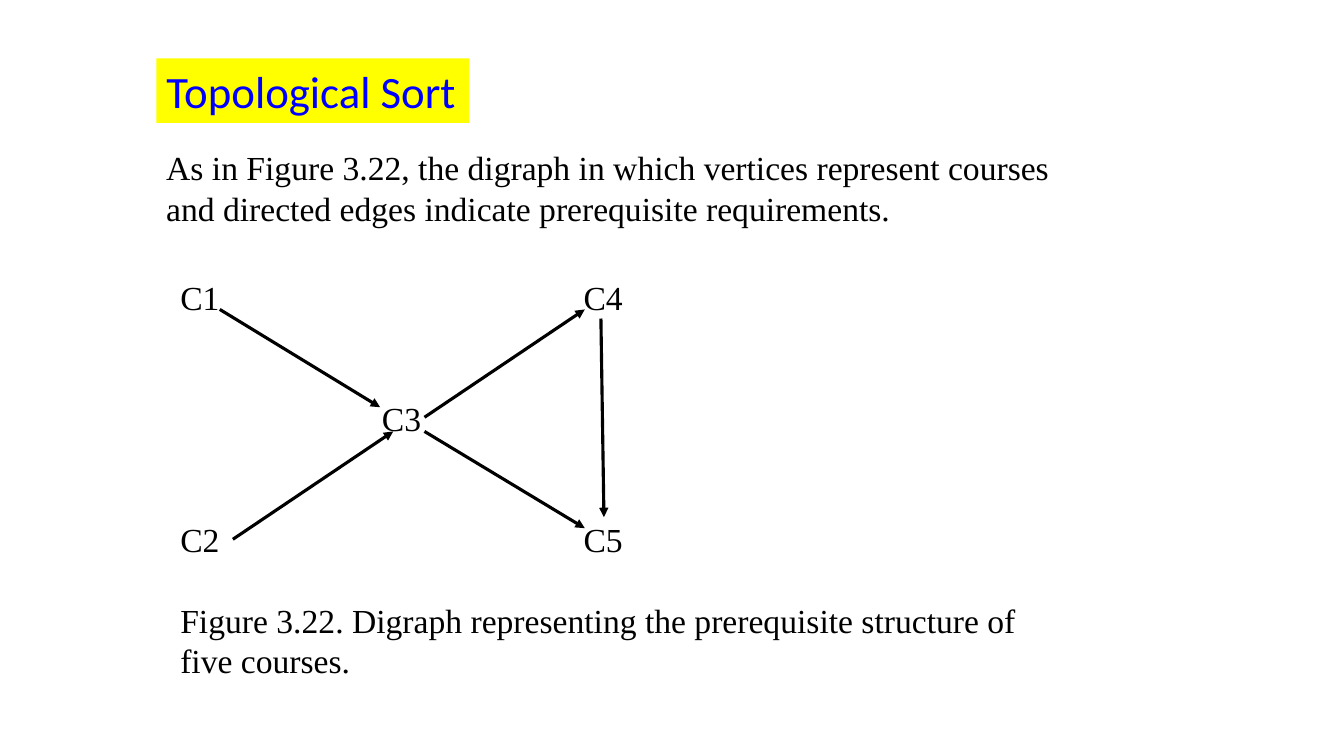
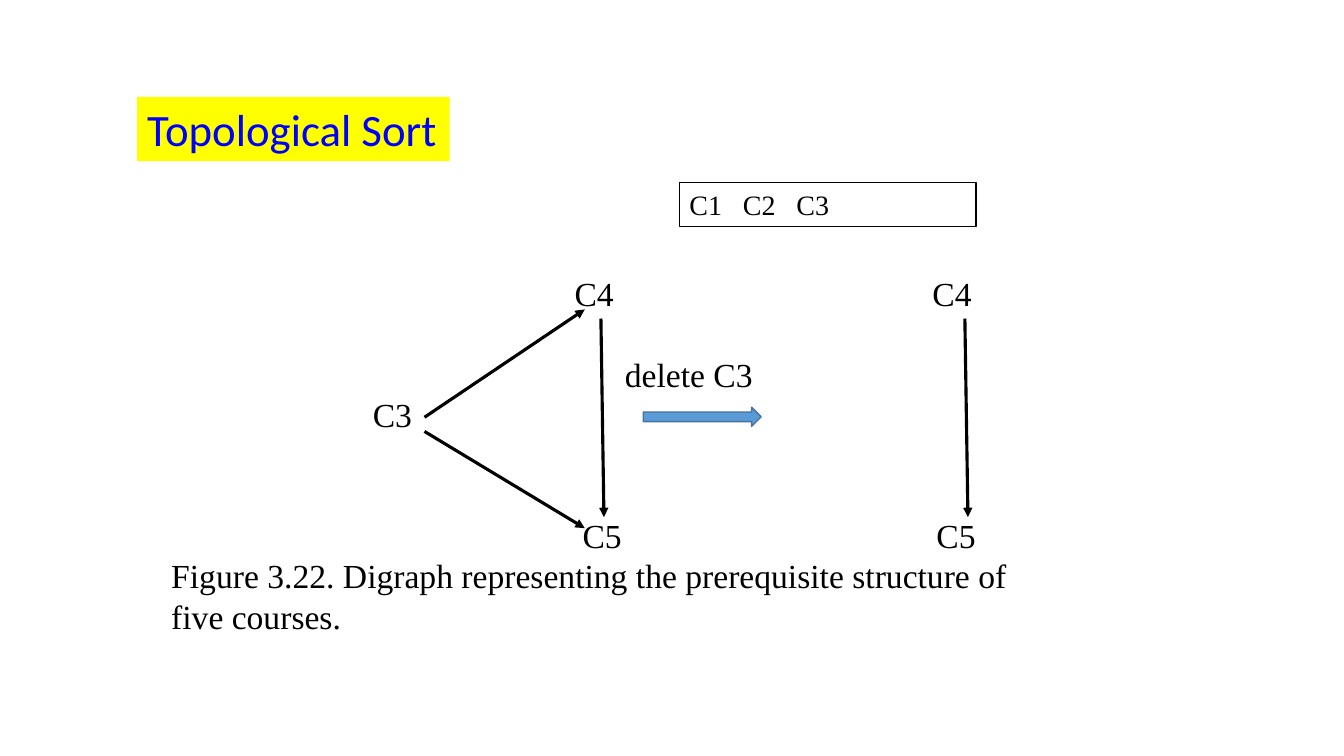
from lxml.etree import SubElement
from pptx import Presentation
from pptx.dml.color import RGBColor
from pptx.enum.shapes import MSO_CONNECTOR, MSO_SHAPE
from pptx.enum.text import MSO_ANCHOR, MSO_AUTO_SIZE, PP_ALIGN
from pptx.oxml.ns import qn
from pptx.util import Emu, Pt

PX = 9144  # 100 px to the inch
SERIF, SANS = "Times New Roman", "Calibri"
BLACK, WHITE, YELLOW, TITLE_BLUE = "000000", "FFFFFF", "FFFF00", "0000FF"
ARROW_FILL, ARROW_LINE = "5B9BD5", "43739E"

TITLE = "Topological Sort"
CAPTION = ("Figure 3.22. Digraph representing the prerequisite structure of "
           "five courses.")
INTRO = ("As in Figure 3.22, the digraph in which vertices represent courses "
         "and directed edges indicate prerequisite requirements.")
LABEL_SIZE = (70, 46)
PARAGRAPH_HEIGHT = 91

C1_TO_C3 = (218, 307, 377, 404)
C2_TO_C3 = (231, 535, 390, 428)
C3_TO_C4 = (421, 414, 580, 307)
C3_TO_C5 = (421, 428, 580, 524)
C4_TO_C5 = (596, 316, 599, 513)
REMAINING_C4_TO_C5 = (957, 316, 960, 513)

SLIDES = [
    {
        "title_at": (155, 58),
        "paragraphs": [(INTRO, 155, 141, 935), (CAPTION, 169, 590, 904)],
        "courses": [("C1", 169, 270), ("C4", 569, 270), ("C3", 369, 390),
                    ("C2", 169, 510), ("C5", 569, 510)],
        "edges": [C1_TO_C3, C3_TO_C5, C3_TO_C4, C2_TO_C3, C4_TO_C5],
    },
    {
        "title_at": (136, 96),
        "paragraphs": [(CAPTION, 160, 546, 904)],
        "courses": [("C4", 560, 266), ("C4", 915, 266), ("C3", 360, 386),
                    ("C5", 568, 506), ("C5", 919, 506)],
        "edges": [C3_TO_C5, C3_TO_C4, C4_TO_C5, REMAINING_C4_TO_C5],
        "step": ("delete C3", 610, 346, 150),
        "step_arrow": (638, 404, 117, 19),
        "sorted": ["C1", "C2", "C3"],
        "sorted_box": (674, 181, 294, 44),
    },
]
SORTED_PITCH = 53


def px(*lengths):
    return [Emu(length * PX) for length in lengths]


def color(hex_code):
    return RGBColor.from_string(hex_code)


def set_font(paragraph, size, name=SERIF, hex_code=BLACK):
    paragraph.font.size = Pt(size)
    paragraph.font.name = name
    paragraph.font.color.rgb = color(hex_code)


def add_title(slide, left, top):
    title = slide.shapes.title
    title.left, title.top, title.width, title.height = px(left, top, 310, 64)
    title.fill.solid()
    title.fill.fore_color.rgb = color(YELLOW)
    frame = title.text_frame
    frame.text = TITLE
    frame.auto_size = MSO_AUTO_SIZE.NONE
    frame.vertical_anchor = MSO_ANCHOR.MIDDLE
    frame.paragraphs[0].alignment = PP_ALIGN.LEFT
    set_font(frame.paragraphs[0], 32, SANS, TITLE_BLUE)


def add_text(slide, text, left, top, width, height):
    frame = slide.shapes.add_textbox(*px(left, top, width, height)).text_frame
    frame.word_wrap = True
    frame.text = text
    set_font(frame.paragraphs[0], 24)


def add_edge(slide, *ends):
    edge = slide.shapes.add_connector(MSO_CONNECTOR.STRAIGHT, *px(*ends))
    edge.line.color.rgb = color(BLACK)
    edge.line.width = Pt(2.25)
    SubElement(edge.line._get_or_add_ln(), qn("a:tailEnd"), type="triangle")
    SubElement(edge._element.spPr, qn("a:effectLst"))


def add_block(slide, preset, box, fill, line):
    block = slide.shapes.add_shape(preset, *px(*box))
    block.shadow.inherit = False
    block.fill.solid()
    block.fill.fore_color.rgb = color(fill)
    block.line.color.rgb = color(line)
    block.line.width = Pt(1)
    return block


def add_sorted_list(slide, courses, box):
    """Boxed row of the courses sorted so far, spaced by tab stops."""
    block = add_block(slide, MSO_SHAPE.RECTANGLE, box, WHITE, BLACK)
    frame = block.text_frame
    frame.text = "\t".join(courses)
    paragraph = frame.paragraphs[0]
    paragraph.alignment = PP_ALIGN.LEFT
    tabs = SubElement(paragraph._p.get_or_add_pPr(), qn("a:tabLst"))
    for column in range(1, len(courses)):
        SubElement(tabs, qn("a:tab"), pos=str(column * SORTED_PITCH * PX), algn="l")
    set_font(paragraph, 20)


def build_slide(prs, content):
    slide = prs.slides.add_slide(prs.slide_layouts.get_by_name("Title Only"))
    add_title(slide, *content["title_at"])
    for paragraph in content["paragraphs"]:
        add_text(slide, *paragraph, PARAGRAPH_HEIGHT)
    for course in content["courses"]:
        add_text(slide, *course, *LABEL_SIZE)
    for edge in content["edges"]:
        add_edge(slide, *edge)
    if "step" in content:
        add_text(slide, *content["step"], LABEL_SIZE[1])
        add_block(slide, MSO_SHAPE.RIGHT_ARROW, content["step_arrow"],
                  ARROW_FILL, ARROW_LINE)
        add_sorted_list(slide, content["sorted"], content["sorted_box"])


def main():
    prs = Presentation()
    prs.slide_width, prs.slide_height = px(1333, 750)
    for content in SLIDES:
        build_slide(prs, content)
    prs.save("out.pptx")


if __name__ == "__main__":
    main()
